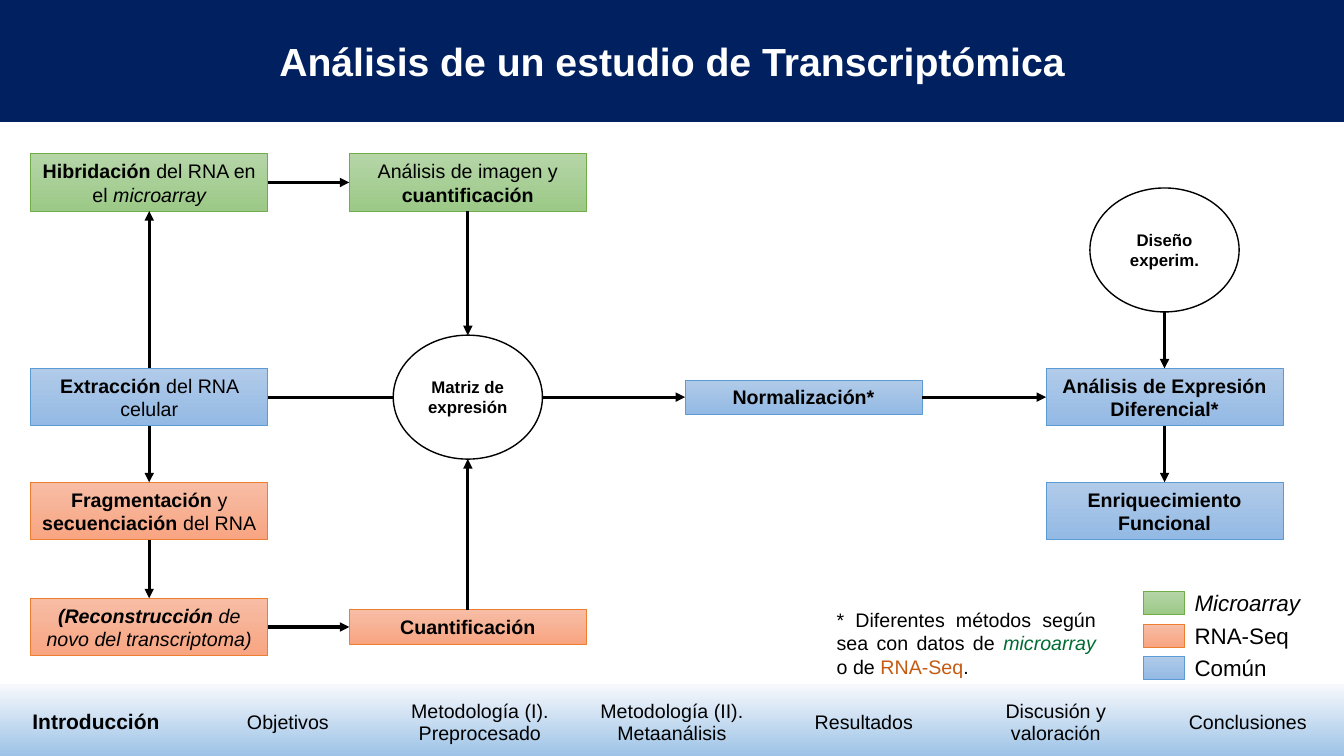
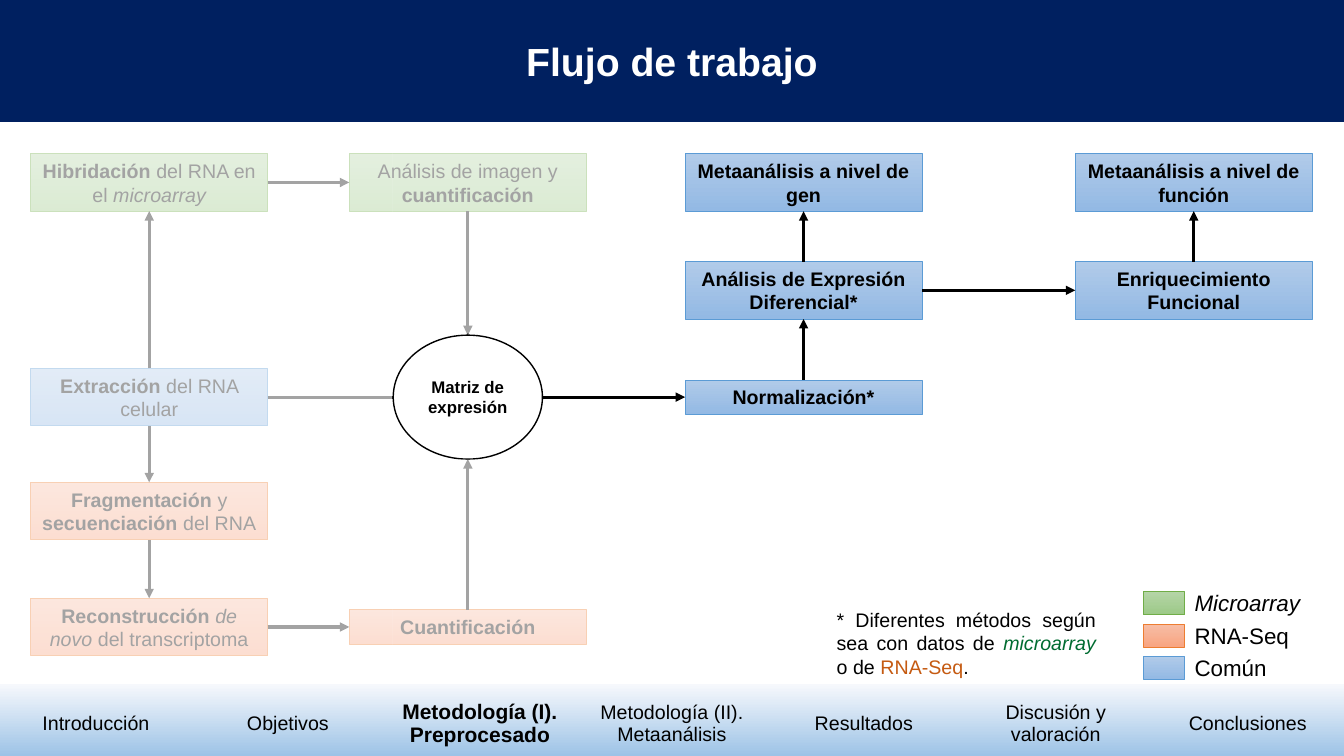
from lxml import etree
from pptx import Presentation
from pptx import util as u
from pptx.dml.color import RGBColor
from pptx.enum import shapes, text
from pptx.oxml.ns import qn

rgb = RGBColor.from_string
FONT = "Arial"
BLACK, WHITE, NAVY = "000000", "FFFFFF", "002060"
RECT, OVAL = shapes.MSO_SHAPE.RECTANGLE, shapes.MSO_SHAPE.OVAL
CENTER, LEFT, JUSTIFY = text.PP_ALIGN.CENTER, text.PP_ALIGN.LEFT, text.PP_ALIGN.JUSTIFY
TOP, WEST, BOTTOM, EAST = range(4)
NO_TABLE_STYLE = "{2D5ABB26-0587-4C30-8999-92F81FD0307C}"

# Palettes: gradient start, gradient end, outline
GREEN = ("B5D5A7", "9CC987", "70AD47")
ORANGE = ("F7BDA5", "F8A582", "ED7D31")
BLUE = ("B1CBE9", "93B9E4", "5B9BD5")
PLAIN = (WHITE, WHITE, BLACK)
FOOTER = ("F6F8FC", "9DC3E6", None)
VEIL = (WHITE, WHITE, None)

# Diagram grid: box centres, box size by number of lines, circle size
COL = [1.48, 4.64, 7.97, 11.55]
FAR = 11.84
ROW = [1.81, 3.94, 5.07, 6.22]
UPPER = 2.88
ONE_LINE, TWO_LINES, CIRCLE = (2.35, 0.34), (2.35, 0.57), (1.48, 1.23)

SECTIONS = ["Introducción", "Objetivos", "Metodología (I). Preprocesado",
            "Metodología (II). Metaanálisis", "Resultados",
            "Discusión y valoración", "Conclusiones"]
LEGEND = [("Microarray", "i", GREEN), ("RNA-Seq", "", ORANGE), ("Común", "", BLUE)]
NOTE = [("* Diferentes métodos según sea con datos de ", ""),
        ("microarray", "i", "006C31"), (" o de ", ""),
        ("RNA-Seq", "", "C55A11"), (".", "")]

# Boxes: name -> centre x, centre y, size, palette, spans
common_boxes = {
    "hybridization": (COL[0], ROW[0], TWO_LINES, GREEN,
                      [("Hibridación", "b"), (" del RNA en el ", ""), ("microarray", "i")]),
    "image": (COL[1], ROW[0], TWO_LINES, GREEN,
              [("Análisis de imagen y ", ""), ("cuantificación", "b")]),
    "extraction": (COL[0], ROW[1], TWO_LINES, BLUE,
                   [("Extracción", "b"), (" del RNA celular", "")]),
    "matrix": (COL[1], ROW[1], CIRCLE, PLAIN, [("Matriz de expresión", "b")]),
    "fragmentation": (COL[0], ROW[2], TWO_LINES, ORANGE,
                      [("Fragmentación ", "b"), ("y ", ""),
                       ("secuenciación ", "b"), ("del RNA", "")]),
    "counting": (COL[1], ROW[3], ONE_LINE, ORANGE, [("Cuantificación", "b")]),
}
normalization = (COL[2], ROW[1], ONE_LINE, BLUE, [("Normalización*", "b")])
differential = [("Análisis de Expresión Diferencial*", "b")]
enrichment = [("Enriquecimiento Funcional", "b")]

# Arrows: from name, side, to name, side
common_arrows = [
    ("extraction", TOP, "hybridization", BOTTOM),
    ("extraction", BOTTOM, "fragmentation", TOP),
    ("extraction", EAST, "matrix", WEST),
    ("fragmentation", BOTTOM, "reconstruction", TOP),
    ("reconstruction", EAST, "counting", WEST),
    ("hybridization", EAST, "image", WEST),
    ("image", BOTTOM, "matrix", TOP),
    ("counting", TOP, "matrix", BOTTOM),
]

pages = [
    {"title": "Análisis de un estudio de Transcriptómica",
     "section": 0,
     "reconstruction": [("(Reconstrucción ", "bi"), ("de novo del transcriptoma)", "i")],
     "veils": [],
     "boxes": {
         "normalization": normalization,
         "design": (COL[3], 2.48, CIRCLE, PLAIN, [("Diseño experim.", "b")]),
         "differential": (COL[3], ROW[1], TWO_LINES, BLUE, differential),
         "enrichment": (COL[3], ROW[2], TWO_LINES, BLUE, enrichment)},
     "arrows": [("matrix", EAST, "normalization", WEST),
                ("normalization", EAST, "differential", WEST),
                ("design", BOTTOM, "differential", TOP),
                ("differential", BOTTOM, "enrichment", TOP)]},
    {"title": "Flujo de trabajo",
     "section": 2,
     "reconstruction": [("Reconstrucción ", "b"), ("de novo", "i"),
                        (" del transcriptoma", "")],
     "veils": [(0.03, 1.31, 3.86, 5.3), (3.89, 4.56, 3.83, 1.94),
               (3.89, 1.37, 1.94, 1.94)],
     "boxes": {
         "normalization": normalization,
         "differential": (COL[2], UPPER, TWO_LINES, BLUE, differential),
         "gene": (COL[2], ROW[0], TWO_LINES, BLUE, [("Metaanálisis a nivel de gen", "b")]),
         "enrichment": (FAR, UPPER, TWO_LINES, BLUE, enrichment),
         "function": (FAR, ROW[0], TWO_LINES, BLUE,
                      [("Metaanálisis a nivel de función", "b")])},
     "arrows": [("matrix", EAST, "normalization", WEST),
                ("normalization", TOP, "differential", BOTTOM),
                ("differential", TOP, "gene", BOTTOM),
                ("differential", EAST, "enrichment", WEST),
                ("enrichment", TOP, "function", BOTTOM)]},
]


def write(frame, spans, size, align=CENTER, color=BLACK):
    """Fill one paragraph with (text, style[, colour]) spans."""
    frame.word_wrap = True
    para = frame.paragraphs[0]
    para.alignment = align
    for words, style, *own_color in spans:
        span = para.add_run()
        span.text = words
        span.font.name, span.font.size = FONT, u.Pt(size)
        span.font.bold, span.font.italic = "b" in style, "i" in style
        span.font.color.rgb = rgb(own_color[0] if own_color else color)


def add_box(page, kind, area, palette, line_width=0.5):
    """Draw a preset shape with a solid or vertical gradient fill."""
    box = page.shapes.add_shape(kind, *[u.Inches(value) for value in area])
    box.shadow.inherit = False
    start, end, outline = palette
    if start == end:
        box.fill.solid()
        box.fill.fore_color.rgb = rgb(start)
    else:
        box.fill.gradient()
        box.fill.gradient_angle = 270
        for stop, color in zip(box.fill.gradient_stops, (start, end)):
            stop.color.rgb = rgb(color)
    if outline:
        box.line.color.rgb = rgb(outline)
        box.line.width = u.Pt(line_width)
    else:
        box.line.fill.background()
    return box


deck = Presentation()
deck.slide_width, deck.slide_height = u.Inches(13.33), u.Inches(7.5)

for content in pages:
    page = deck.slides.add_slide(deck.slide_layouts[5])

    # Title band
    title = page.shapes.title
    title.left, title.top = u.Inches(0), u.Inches(0)
    title.width, title.height = deck.slide_width, u.Inches(1.2)
    title.fill.solid()
    title.fill.fore_color.rgb = rgb(NAVY)
    title.line.color.rgb = rgb(NAVY)
    title.line.width = u.Pt(1)
    title.text_frame.vertical_anchor = text.MSO_ANCHOR.MIDDLE
    write(title.text_frame, [(content["title"], "b")], 28, color=WHITE)

    # Diagram: common part, veils over it, then the part of this page
    left_boxes = common_boxes | {
        "reconstruction": (COL[0], ROW[3], TWO_LINES, ORANGE, content["reconstruction"])}
    layers = [(left_boxes, common_arrows, content["veils"]),
              (content["boxes"], content["arrows"], [])]
    drawn = {}
    for boxes, arrows, veils in layers:
        for name, (x, y, size, palette, spans) in boxes.items():
            width, height = size
            is_circle = size == CIRCLE
            box = add_box(page, OVAL if is_circle else RECT,
                          (x - width / 2, y - height / 2, width, height),
                          palette, 1 if is_circle else 0.5)
            write(box.text_frame, spans, 12 if is_circle else 14)
            drawn[name] = box

        for start, start_side, end, end_side in arrows:
            ends = []
            for name, side in ((start, start_side), (end, end_side)):
                box = drawn[name]
                across, down = [(0.5, 0), (0, 0.5), (0.5, 1), (1, 0.5)][side]
                ends += [int(box.left + across * box.width),
                         int(box.top + down * box.height)]
            arrow = page.shapes.add_connector(shapes.MSO_CONNECTOR.STRAIGHT, *ends)
            if drawn[start].auto_shape_type == RECT:
                arrow.begin_connect(drawn[start], start_side)
            if drawn[end].auto_shape_type == RECT:
                arrow.end_connect(drawn[end], end_side)
            arrow.line.color.rgb = rgb(BLACK)
            arrow.line.width = u.Pt(2.25)
            if (start, end) != ("extraction", "matrix"):
                etree.SubElement(arrow.line._get_or_add_ln(), qn("a:tailEnd"), type="triangle")
            etree.SubElement(arrow._element.spPr, qn("a:effectLst"))

        for area in veils:
            veil = add_box(page, RECT, area, VEIL)
            fill_color = veil._element.spPr.find(qn("a:solidFill"))[0]
            etree.SubElement(fill_color, qn("a:alpha"), val="64000")

    # Legend and note
    for index, (label, style, palette) in enumerate(LEGEND):
        offset = index * 0.32
        add_box(page, RECT, (11.34, 5.87 + offset, 0.41, 0.23), palette)
        box = page.shapes.add_textbox(u.Inches(11.75), u.Inches(5.8 + offset),
                                      u.Inches(1.4), u.Inches(0.37))
        write(box.text_frame, [(label, style)], 16, LEFT)
    note = page.shapes.add_textbox(u.Inches(8.2), u.Inches(5.98),
                                   u.Inches(2.77), u.Inches(0.81))
    write(note.text_frame, NOTE, 14, JUSTIFY)

    # Footer navigation, current section in bold
    add_box(page, RECT, (0, 6.79, 13.33, 0.71), FOOTER)
    table = page.shapes.add_table(1, len(SECTIONS), u.Inches(0), u.Inches(6.88),
                                  deck.slide_width, u.Inches(0.57)).table
    table.first_row = table.horz_banding = False
    table._tbl.tblPr.find(qn("a:tableStyleId")).text = NO_TABLE_STYLE
    for index, section in enumerate(SECTIONS):
        cell = table.cell(0, index)
        cell.fill.background()
        cell.vertical_anchor = text.MSO_ANCHOR.MIDDLE
        current = index == content["section"]
        write(cell.text_frame, [(section, "b" if current else "")], 15 if current else 14)

deck.save("out.pptx")
